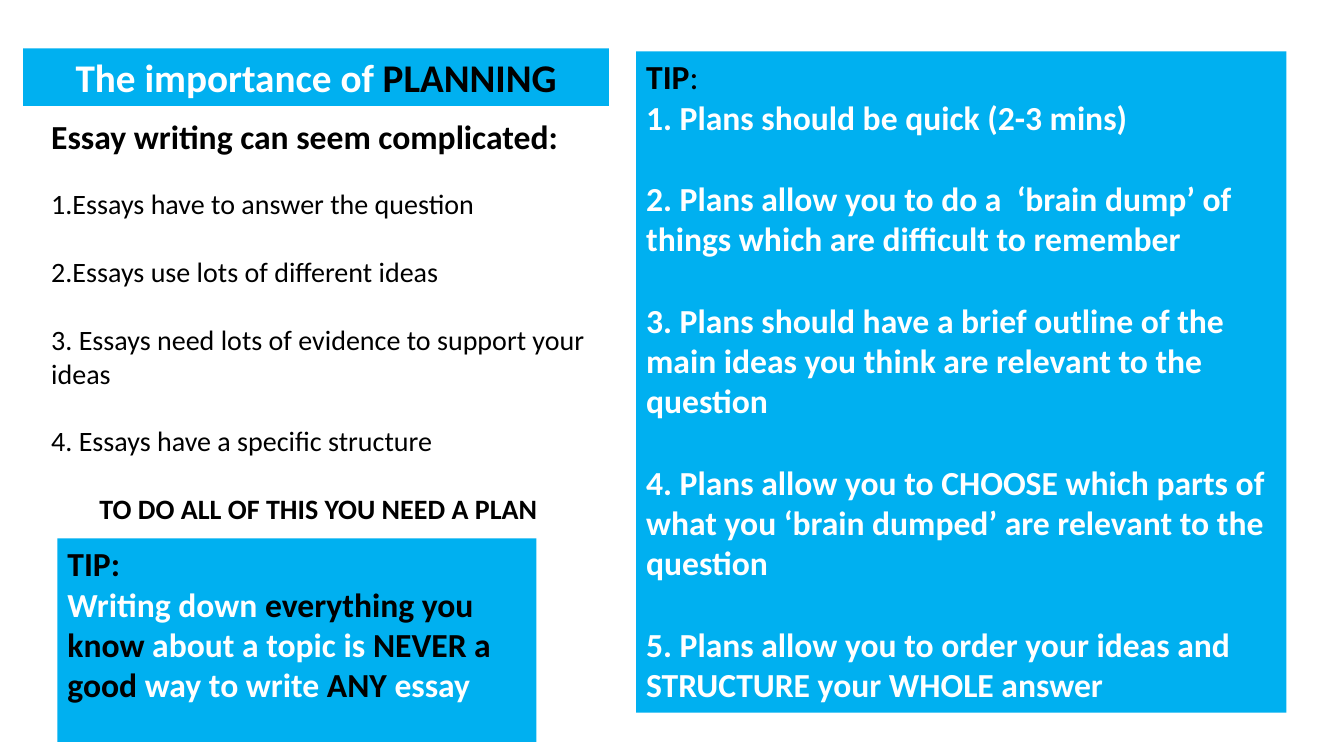
from pptx import Presentation
from pptx.dml.color import RGBColor
from pptx.enum import shapes, text
from pptx.util import Inches, Pt

BLUE = RGBColor(0x00, 0xB0, 0xF0)
BLACK = RGBColor(0x00, 0x00, 0x00)
WHITE = RGBColor(0xFF, 0xFF, 0xFF)
FONT = "Calibri"

ESSAY_DEMANDS = [
    "1.Essays have to answer the question",
    "2.Essays use lots of different ideas",
    "3. Essays need lots of evidence to support your ideas",
    "4. Essays have a specific structure",
]
PLAN_TIPS = [
    "1. Plans should be quick (2-3 mins)",
    "2. Plans allow you to do a  ‘brain dump’ of things which are difficult to remember",
    "3. Plans should have a brief outline of the main ideas you think are relevant to the question",
    "4. Plans allow you to CHOOSE which parts of what you ‘brain dumped’ are relevant to the question",
    "5. Plans allow you to order your ideas and STRUCTURE your WHOLE answer",
]
WARNING = [
    ("Writing down ", WHITE),
    ("everything you know ", BLACK),
    ("about a topic is ", WHITE),
    ("NEVER a good ", BLACK),
    ("way to write ", WHITE),
    ("ANY", BLACK),
    (" essay", WHITE),
]


def prepare_frame(shape):
    frame = shape.text_frame
    frame.word_wrap = True
    frame.vertical_anchor = text.MSO_ANCHOR.TOP
    return frame


def add_panel(slide, left, top, width, height):
    """Add a blue rectangle and return its text frame."""
    panel = slide.shapes.add_shape(
        shapes.MSO_SHAPE.RECTANGLE,
        Inches(left), Inches(top), Inches(width), Inches(height),
    )
    panel.shadow.inherit = False
    panel.fill.solid()
    panel.fill.fore_color.rgb = BLUE
    panel.line.fill.background()
    return prepare_frame(panel)


def add_text_box(slide, left, top, width, height):
    box = slide.shapes.add_textbox(
        Inches(left), Inches(top), Inches(width), Inches(height)
    )
    return prepare_frame(box)


def write_paragraph(frame, pieces, size, bold=True, gap=0, centred=False):
    """Write (wording, colour) pieces as the next paragraph, gap points below the last."""
    paragraph = frame.paragraphs[0]
    if paragraph.runs:
        paragraph = frame.add_paragraph()
    paragraph.alignment = text.PP_ALIGN.CENTER if centred else text.PP_ALIGN.LEFT
    paragraph.space_before = Pt(gap)
    for wording, colour in pieces:
        run = paragraph.add_run()
        run.text = wording
        run.font.name = FONT
        run.font.size = Pt(size)
        run.font.bold = bold
        run.font.color.rgb = colour
    return paragraph


def add_title(slide):
    frame = add_panel(slide, 0.23, 0.48, 5.81, 0.57)
    pieces = [("The importance of ", WHITE), ("PLANNING", BLACK)]
    write_paragraph(frame, pieces, 28, centred=True)


def add_essay_demands(slide):
    frame = add_text_box(slide, 0.41, 1.1, 5.5, 5.39)
    write_paragraph(frame, [("Essay writing can seem complicated:", BLACK)], 24)
    for index, demand in enumerate(ESSAY_DEMANDS):
        gap = 24.4 if index else 22
        write_paragraph(frame, [(demand, BLACK)], 20, bold=False, gap=gap)
    conclusion = [("TO DO ALL OF THIS YOU NEED A PLAN", BLACK)]
    write_paragraph(frame, conclusion, 20, gap=24.4, centred=True)


def add_plan_tips(slide):
    frame = add_panel(slide, 6.31, 0.51, 6.45, 6.56)
    heading = write_paragraph(frame, [("TIP", BLACK), (":", BLACK)], 24)
    heading.runs[1].font.bold = False
    for index, tip in enumerate(PLAN_TIPS):
        write_paragraph(frame, [(tip, WHITE)], 24, gap=29.3 if index else 0)


def add_warning(slide):
    frame = add_panel(slide, 0.57, 5.34, 4.75, 2.02)
    write_paragraph(frame, [("TIP:", BLACK)], 24)
    write_paragraph(frame, WARNING, 24)


def main():
    presentation = Presentation()
    presentation.slide_width = Inches(13.33)
    presentation.slide_height = Inches(7.5)
    slide = presentation.slides.add_slide(presentation.slide_layouts[6])
    add_title(slide)
    add_essay_demands(slide)
    add_plan_tips(slide)
    add_warning(slide)
    presentation.save("out.pptx")


if __name__ == "__main__":
    main()
